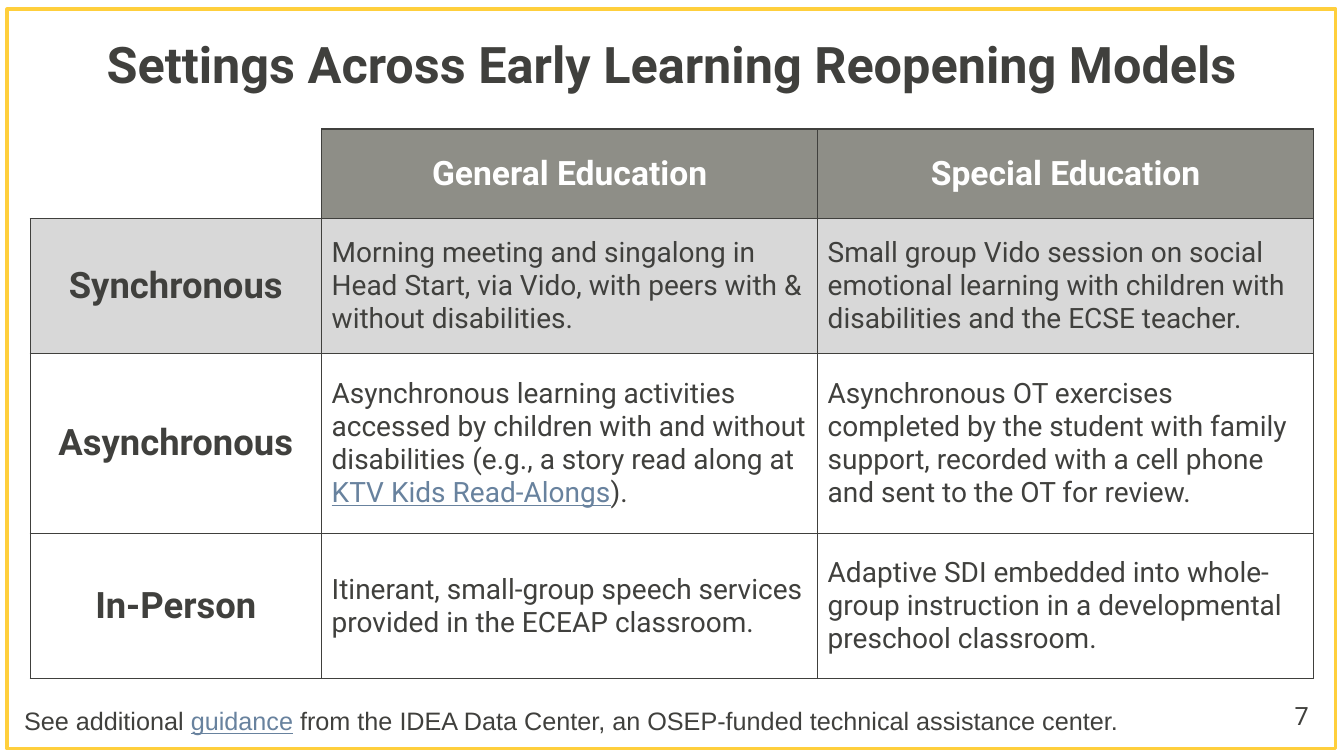
import dataclasses

import lxml.etree
import pptx
import pptx.dml.color
import pptx.enum.shapes
import pptx.enum.text
import pptx.oxml.ns
import pptx.util

Inches = pptx.util.Inches
ALIGN = pptx.enum.text.PP_ALIGN
ANCHOR = pptx.enum.text.MSO_ANCHOR


@dataclasses.dataclass(frozen=True)
class Theme:
    ink: str = "40403D"
    link: str = "68829E"
    white: str = "FFFFFF"
    header: str = "8E8E87"
    band: str = "D8D8D8"
    frame: str = "FFCF3C"
    font: str = "Roboto"
    note_font: str = "Arial"
    title_size: int = 36
    row_size: int = 26
    header_size: int = 24
    body_size: int = 20
    note_size: int = 18


THEME = Theme()
WIDTH, HEIGHT = 13.33, 7.5
MARGIN = 0.3
CONTENT_WIDTH = WIDTH - 2 * MARGIN
COLUMN_WIDTHS = [2.89, 4.92, 4.92]
ROW_HEIGHTS = [0.89, 1.33, 1.79, 1.43]

# Text between bars is styled as a link
HEADERS = ["", "General Education", "Special Education"]
ROWS = [
    ["Synchronous",
     "Morning meeting and singalong in Head Start, via Vido, with peers with & without disabilities.",
     "Small group Vido session on social emotional learning with children with disabilities "
     "and the ECSE teacher."],
    ["Asynchronous",
     "Asynchronous learning activities accessed by children with and without disabilities "
     "(e.g., a story read along at |KTV Kids Read-Alongs|).",
     "Asynchronous OT exercises completed by the student with family support, recorded with "
     "a cell phone and sent to the OT for review."],
    ["In-Person",
     "Itinerant, small-group speech services provided in the ECEAP classroom.",
     "Adaptive SDI embedded into whole-group instruction in a developmental preschool classroom."],
]
NOTE = ("See additional |guidance| from the IDEA Data Center, "
        "an OSEP-funded technical assistance center.")


def rgb(value):
    return pptx.dml.color.RGBColor.from_string(value)


def write_text(frame, text, size, color=THEME.ink, font=THEME.font, bold=False,
               align=ALIGN.LEFT, line_spacing=None):
    paragraph = frame.paragraphs[0]
    paragraph.alignment = align
    if line_spacing:
        paragraph.line_spacing = line_spacing
    for index, part in enumerate(text.split("|")):
        is_link = index % 2 == 1
        run = paragraph.add_run()
        run.text = part
        run.font.name = font
        run.font.size = pptx.util.Pt(size)
        run.font.bold = bold
        run.font.underline = is_link
        run.font.color.rgb = rgb(THEME.link if is_link else color)


def add_text_box(slide, box, text, size, anchor=ANCHOR.MIDDLE, **text_format):
    shape = slide.shapes.add_textbox(*map(Inches, box))
    shape.text_frame.word_wrap = True
    shape.text_frame.vertical_anchor = anchor
    write_text(shape.text_frame, text, size, **text_format)


def add_frame(slide, box):
    shape = slide.shapes.add_shape(pptx.enum.shapes.MSO_SHAPE.RECTANGLE, *map(Inches, box))
    shape.shadow.inherit = False
    shape.fill.background()
    shape.line.color.rgb = rgb(THEME.frame)
    shape.line.width = pptx.util.Pt(2.25)


def set_borders(cell, hidden=""):
    """Draw a thin line on every side, except the sides named in hidden."""
    qn = pptx.oxml.ns.qn
    properties = cell._tc.get_or_add_tcPr()
    for side in "LRTB":
        line = lxml.etree.SubElement(properties, qn(f"a:ln{side}"), w=str(pptx.util.Pt(1)))
        if side in hidden:
            lxml.etree.SubElement(line, qn("a:noFill"))
        else:
            fill = lxml.etree.SubElement(line, qn("a:solidFill"))
            lxml.etree.SubElement(fill, qn("a:srgbClr"), val=THEME.ink)


def format_cell(cell, text, row, column):
    is_corner = row == 0 and column == 0
    set_borders(cell, hidden="LT" if is_corner else "")
    fill_color = {0: THEME.header, 1: THEME.band}.get(row)
    if is_corner or fill_color is None:
        cell.fill.background()
    else:
        cell.fill.solid()
        cell.fill.fore_color.rgb = rgb(fill_color)
    cell.vertical_anchor = ANCHOR.MIDDLE
    cell.margin_left = cell.margin_right = Inches(0.1)
    cell.margin_top = cell.margin_bottom = Inches(0.05)
    if row == 0:
        text_format = dict(size=THEME.header_size, color=THEME.white, bold=True, align=ALIGN.CENTER)
    elif column == 0:
        text_format = dict(size=THEME.row_size, bold=True, align=ALIGN.CENTER)
    else:
        text_format = dict(size=THEME.body_size)
    if text:
        write_text(cell.text_frame, text, **text_format)


def add_settings_table(slide, box):
    contents = [HEADERS] + ROWS
    left, top, width, height = box
    table = slide.shapes.add_table(len(contents), len(HEADERS), *map(Inches, box)).table
    table.first_row = table.horz_banding = False
    for column, share in zip(table.columns, COLUMN_WIDTHS):
        column.width = Inches(width * share / sum(COLUMN_WIDTHS))
    for row, share in zip(table.rows, ROW_HEIGHTS):
        row.height = Inches(height * share / sum(ROW_HEIGHTS))
    for row, texts in enumerate(contents):
        for column, text in enumerate(texts):
            format_cell(table.cell(row, column), text, row, column)


def add_footer(slide, box):
    left, top, width, height = box
    number_width = 0.7
    add_text_box(slide, (left + width - number_width, top, number_width, height), "7",
                 THEME.note_size, align=ALIGN.RIGHT)
    add_text_box(slide, (left, top + 0.05, 11.33, height), NOTE, THEME.note_size,
                 anchor=ANCHOR.TOP, font=THEME.note_font)


def build_settings_slide(presentation):
    slide = presentation.slides.add_slide(presentation.slide_layouts[6])
    slide.background.fill.solid()
    slide.background.fill.fore_color.rgb = rgb(THEME.white)
    # Frame and title
    add_frame(slide, (0.07, 0.09, 13.18, 7.34))
    add_text_box(slide, (MARGIN, 0.28, CONTENT_WIDTH, 0.78),
                 "Settings Across Early Learning Reopening Models", THEME.title_size,
                 bold=True, align=ALIGN.CENTER, line_spacing=0.9)
    # Table and footer
    add_settings_table(slide, (MARGIN, 1.28, CONTENT_WIDTH, 5.45))
    add_footer(slide, (0.14, 6.9, 12.94, 0.4))


def main():
    presentation = pptx.Presentation()
    presentation.slide_width = Inches(WIDTH)
    presentation.slide_height = Inches(HEIGHT)
    build_settings_slide(presentation)
    presentation.save("out.pptx")


if __name__ == "__main__":
    main()
